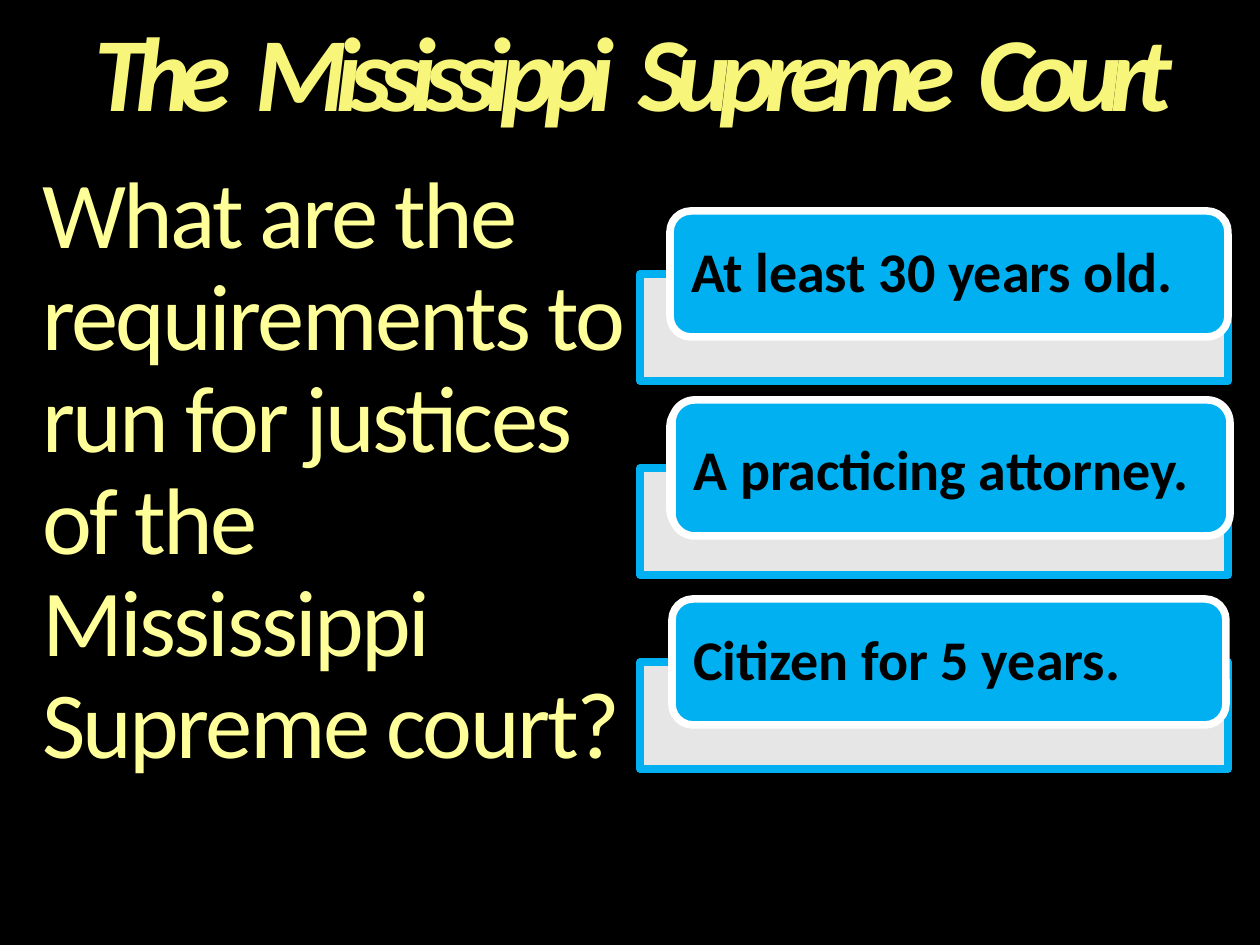
from dataclasses import dataclass

from lxml import etree
from pptx import Presentation
from pptx.dml.color import RGBColor
from pptx.enum.shapes import MSO_SHAPE
from pptx.enum.text import MSO_ANCHOR, PP_ALIGN
from pptx.oxml.ns import qn
from pptx.util import Emu, Pt

RECT, ROUND = MSO_SHAPE.RECTANGLE, MSO_SHAPE.ROUNDED_RECTANGLE
TOP, MIDDLE = MSO_ANCHOR.TOP, MSO_ANCHOR.MIDDLE
LEFT = PP_ALIGN.LEFT
PX_PER_INCH = 126


@dataclass(frozen=True)
class Theme:
    """Colours, font and type sizes of the slide."""
    font: str = "Calibri"
    black: str = "000000"
    white: str = "FFFFFF"
    blue: str = "00B0F0"
    title: str = "F8F57B"
    question: str = "FFFF99"
    title_size: int = 60
    question_size: int = 54
    card_size: int = 32
    border: float = 4.33
    panel_opacity: int = 90


THEME = Theme()


def px(n):
    """Turn pixels into EMU."""
    return Emu(round(n * 914400 / PX_PER_INCH))


def rgb(code):
    """Turn a hex code into a colour."""
    return RGBColor.from_string(code)


def set_frame(tf, anchor, insets=(0, 0, 0, 0)):
    """Set wrapping, anchor and insets, and return the first paragraph."""
    tf.word_wrap = True
    tf.vertical_anchor = anchor
    tf.margin_left, tf.margin_top, tf.margin_right, tf.margin_bottom = map(px, insets)
    p = tf.paragraphs[0]
    p.alignment = LEFT
    p.line_spacing = 0.9
    return p


def add_run(p, text, size, color, spacing=0, bold=False, italic=False):
    """Add a run with letter spacing given in points."""
    r = p.add_run()
    r.text = text
    r.font.name = THEME.font
    r.font.size = Pt(size)
    r.font.bold = bold
    r.font.italic = italic
    r.font.color.rgb = rgb(color)
    r._r.get_or_add_rPr().set("spc", str(round(spacing * 100)))


def add_box(s, kind, box, fill, line):
    """Add a filled and bordered shape."""
    sp = s.shapes.add_shape(kind, *map(px, box))
    sp.shadow.inherit = False
    sp.fill.solid()
    sp.fill.fore_color.rgb = rgb(fill)
    sp.line.color.rgb = rgb(line)
    sp.line.width = Pt(THEME.border)
    return sp


def add_title(s, box, text):
    """Add the tightly spaced title with slightly wider word gaps."""
    sp = s.shapes.add_textbox(*map(px, box))
    p = set_frame(sp.text_frame, TOP)
    for i, word in enumerate(text.split()):
        if i:
            add_run(p, " ", THEME.title_size, THEME.title, -5.8, True, True)
        add_run(p, word, THEME.title_size, THEME.title, -6.4, True, True)


def add_question(s, box, text):
    """Add the question on the left."""
    sp = s.shapes.add_textbox(*map(px, box))
    p = set_frame(sp.text_frame, MIDDLE)
    add_run(p, text, THEME.question_size, THEME.question, -1.5)


def add_panel(s, box):
    """Add the translucent panel behind a card."""
    sp = add_box(s, RECT, box, THEME.white, THEME.blue)
    color = sp.fill._xPr.find(qn("a:solidFill"))[0]
    etree.SubElement(color, qn("a:alpha")).set("val", str(THEME.panel_opacity * 1000))


def add_card(s, box, text="", drop=0):
    """Add a rounded card, with its label lowered by half the drop."""
    sp = add_box(s, ROUND, box, THEME.blue, THEME.white)
    p = set_frame(sp.text_frame, MIDDLE, (15, drop, 15, 0))
    if text:
        add_run(p, text, THEME.card_size, THEME.black, bold=True)


def add_requirements(s, box):
    """Add three panels at an equal pitch and the cards over them."""
    x, y, w, h = box
    pitch, panel_h = 194, 107
    for i in range(3):
        add_panel(s, (x, y + h - panel_h - i * pitch, w, panel_h))
    add_card(s, (x + 30, y, w - 30, 126), "At least 30 years old.")
    add_card(s, (x + 30, y + pitch, w - 30, 126))
    add_card(s, (x + 32, y + 189, w - 30, 136), "A practicing attorney.", 9)
    add_card(s, (x + 32, y + 388, w - 34, 126), "Citizen for 5 years.")


def main():
    """Build and save the slide."""
    prs = Presentation()
    prs.slide_width, prs.slide_height = px(1260), px(945)
    s = prs.slides.add_slide(prs.slide_layouts[6])
    s.background.fill.solid()
    s.background.fill.fore_color.rgb = rgb(THEME.black)
    add_question(s, (42, 168, 598, 609),
                 "What are the requirements to run for justices of the "
                 "Mississippi Supreme court?")
    add_title(s, (95, 21, 1120, 147), "The Mississippi Supreme Court")
    add_requirements(s, (640, 211, 588, 558))
    prs.save("out.pptx")


if __name__ == "__main__":
    main()
